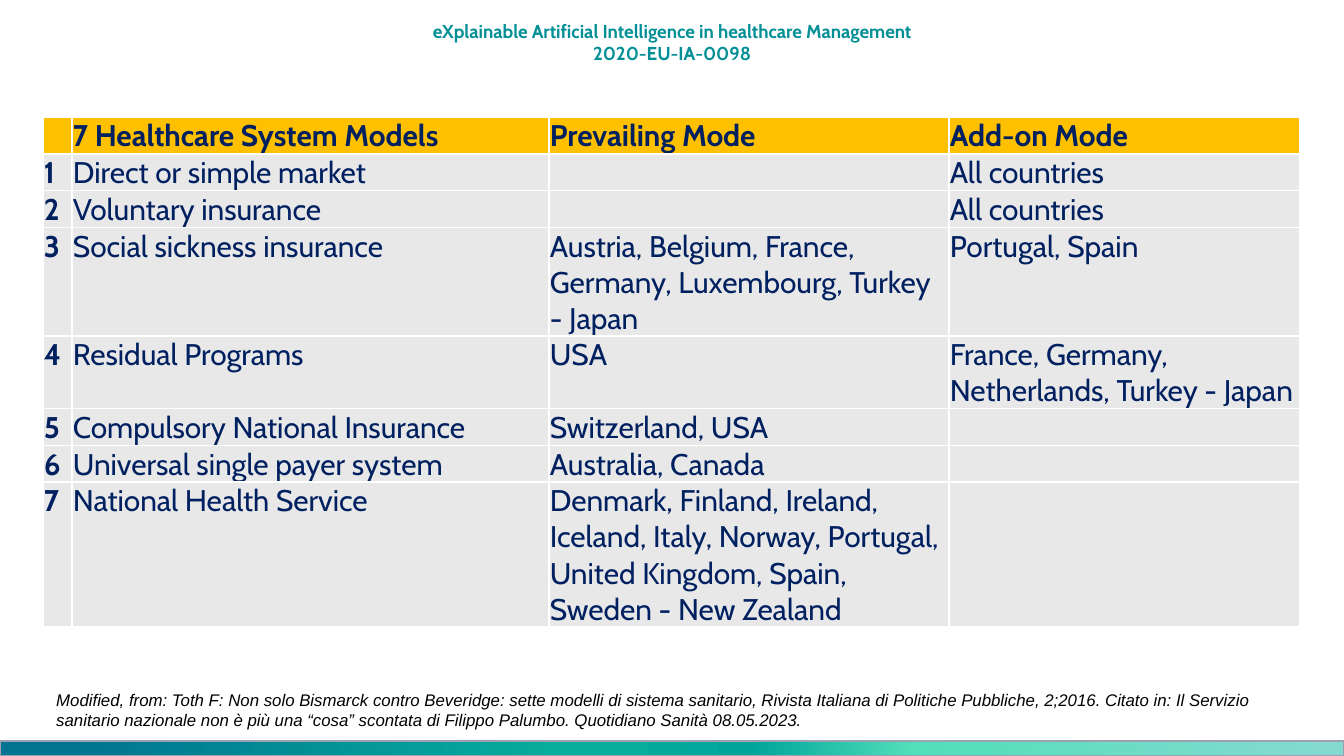
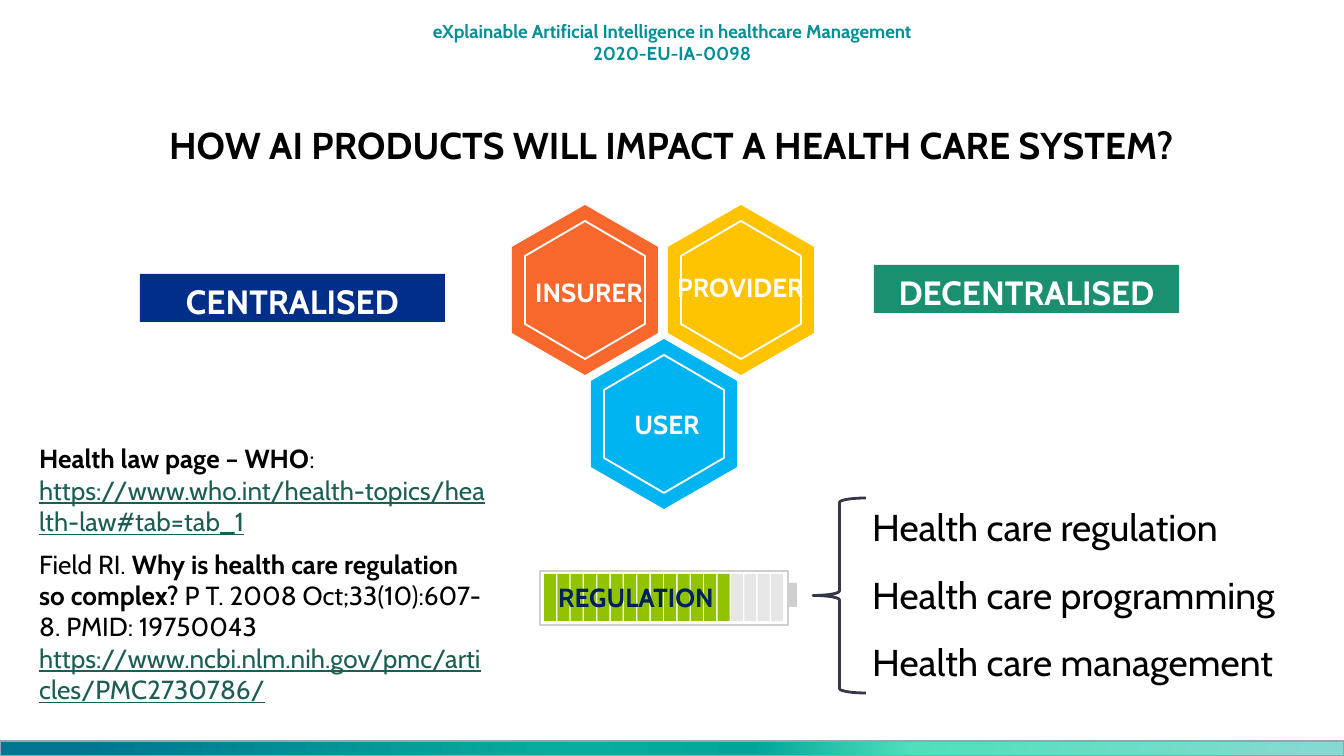
"""Builds two slides on healthcare system models and the impact of AI products."""
from lxml import etree
from pptx import Presentation
from pptx.dml.color import RGBColor
from pptx.enum.shapes import MSO_SHAPE
from pptx.enum.text import MSO_ANCHOR, PP_ALIGN
from pptx.oxml.ns import qn
from pptx.util import Pt

RECTANGLE, LEFT_BRACE = MSO_SHAPE.RECTANGLE, MSO_SHAPE.LEFT_BRACE
LEFT, CENTER = PP_ALIGN.LEFT, PP_ALIGN.CENTER
TOP = MSO_ANCHOR.TOP
EMU_PER_PX = 914400 / 134.4
SLIDE_WIDTH, SLIDE_HEIGHT = 1344, 756

BLACK, WHITE, NAVY, TEAL, LINK = "000000", "FFFFFF", "002060", "038F96", "1C5D54"
AMBER, CELL_GREY, CASE_GREY = "FFC000", "E8E8E9", "CFCFCF"
CHARGED, UNCHARGED, BRACE_COLOR, BAND_LINE = "91C300", "E6E6E6", "353744", "9DA0B2"
BAND_STOPS = [(5, "007490"), (43, "06AF9D"), (56, "00A59A"), (68, "51DFBA"), (99, "85DACF")]

PROJECT = "eXplainable Artificial Intelligence in healthcare Management 2020-EU-IA-0098"
CITATION = (
    "Modified, from: Toth F: Non solo Bismarck contro Beveridge: sette modelli di sistema "
    "sanitario, Rivista Italiana di Politiche Pubbliche, 2;2016. Citato in: Il Servizio sanitario "
    "nazionale non è più una “cosa” scontata di Filippo Palumbo. Quotidiano Sanità 08.05.2023."
)
COLUMN_WIDTHS = [29, 477, 400, 351]
LINE_HEIGHT = 36
MODELS = [
    (1, ("", "7 Healthcare System Models", "Prevailing Mode", "Add-on Mode")),
    (1, ("1", "Direct or simple market", "", "All countries")),
    (1, ("2", "Voluntary insurance", "", "All countries")),
    (3, ("3", "Social sickness insurance",
         "Austria, Belgium, France, Germany, Luxembourg, Turkey - Japan", "Portugal, Spain")),
    (2, ("4", "Residual Programs", "USA", "France, Germany, Netherlands, Turkey - Japan")),
    (1, ("5", "Compulsory National Insurance", "Switzerland, USA", "")),
    (1, ("6", "Universal single payer system", "Australia, Canada", "")),
    (4, ("7", "National Health Service",
         "Denmark, Finland, Ireland, Iceland, Italy, Norway, Portugal, United Kingdom, Spain, "
         "Sweden - New Zealand", "")),
]

QUESTION = "HOW AI PRODUCTS WILL IMPACT A HEALTH CARE SYSTEM?"
ACTORS = [
    ("INSURER", "F8682C", (585, 290), (517, 270, 144)),
    ("USER", "00B4F1", (664, 424), (595, 402, 144)),
    ("PROVIDER", "FFC300", (741, 290), (664, 265, 153)),
]
SYSTEMS = [("CENTRALISED", "002E89", 140, 274), ("DECENTRALISED", "1A9071", 874, 265)]
TOPICS = ["Health care regulation", "Health care programming", "Health care management"]
REFERENCES = [
    [("Health law page – WHO", "bold"), (": ", ""),
     ("https://www.who.int/health-topics/health-law#tab=tab_1", "link")],
    [("Field RI. ", ""), ("Why is health care regulation so complex? ", "bold"),
     ("P T. 2008 Oct;33(10):607-8. PMID: 19750043 ", ""),
     ("https://www.ncbi.nlm.nih.gov/pmc/articles/PMC2730786/", "link")],
]
CELL_COUNT, CHARGED_COUNT = 18, 14


def px(length):
    return round(length * EMU_PER_PX)


def rgb(color):
    return RGBColor.from_string(color)


def set_font(font, size, color, bold=False, italic=False, name="Cabin"):
    font.name, font.size = name, Pt(size)
    font.bold, font.italic = bold, italic
    font.color.rgb = rgb(color)


def paint(shape, fill=None, line=None, width=1):
    shape.shadow.inherit = False
    if fill:
        shape.fill.solid()
        shape.fill.fore_color.rgb = rgb(fill)
    else:
        shape.fill.background()
    if line:
        shape.line.color.rgb = rgb(line)
        shape.line.width = Pt(width)
    else:
        shape.line.fill.background()
    return shape


def add_box(slide, kind, bounds, fill=None, line=None, width=1):
    shape = slide.shapes.add_shape(kind, *map(px, bounds))
    return paint(shape, fill, line, width)


def write(shape, texts, size, color, align=LEFT, after=0, **style):
    frame = shape.text_frame
    frame.word_wrap = True
    frame.vertical_anchor = TOP
    for index, text in enumerate(texts):
        paragraph = frame.paragraphs[0] if index == 0 else frame.add_paragraph()
        paragraph.alignment = align
        paragraph.space_after = Pt(after)
        set_font(paragraph.font, size, color, **style)
        runs = [(text, "")] if isinstance(text, str) else text
        for words, role in runs:
            run = paragraph.add_run()
            run.text = words
            if role == "bold":
                run.font.bold = True
            elif role == "link":
                run.font.underline = True
                run.font.color.rgb = rgb(LINK)
    return frame


def add_text(slide, bounds, texts, size, color, **style):
    return write(slide.shapes.add_textbox(*map(px, bounds)), texts, size, color, **style)


def add_frame(presentation):
    slide = presentation.slides.add_slide(presentation.slide_layouts[6])
    add_text(slide, (416, 13, 512, 59), [PROJECT], 10, TEAL, align=CENTER, bold=True)
    band = add_box(slide, RECTANGLE, (0, 741, SLIDE_WIDTH, 15), line=BAND_LINE, width=0.75)
    band.fill.gradient()
    band.fill.gradient_angle = 0
    stops = band._element.spPr.find(qn("a:gradFill")).find(qn("a:gsLst"))
    for stop in list(stops):
        stops.remove(stop)
    for position, color in BAND_STOPS:
        stop = etree.SubElement(stops, qn("a:gs"), pos=str(position * 1000))
        etree.SubElement(stop, qn("a:srgbClr"), val=color)
    return slide


def border_cell(cell):
    properties = cell._tc.get_or_add_tcPr()
    for side in ("lnL", "lnR", "lnT", "lnB"):
        line = etree.SubElement(properties, qn(f"a:{side}"), w=str(Pt(1)))
        fill = etree.SubElement(line, qn("a:solidFill"))
        etree.SubElement(fill, qn("a:srgbClr"), val=WHITE)


def fill_cell(cell, text, fill, bold):
    border_cell(cell)
    cell.fill.solid()
    cell.fill.fore_color.rgb = rgb(fill)
    cell.margin_left = cell.margin_right = cell.margin_top = px(1)
    cell.margin_bottom = 0
    paragraph = cell.text_frame.paragraphs[0]
    set_font(paragraph.font, 16, NAVY, bold)
    if text:
        paragraph.add_run().text = text
    else:
        paragraph._p.get_or_add_endParaRPr().set("sz", "1600")


def add_models_slide(presentation):
    slide = add_frame(presentation)
    add_text(slide, (43, 683, 1257, 54), [CITATION], 9, BLACK, italic=True, name="Arial")
    height = LINE_HEIGHT * sum(lines for lines, _ in MODELS)
    bounds = (43, 117, sum(COLUMN_WIDTHS), height)
    table = slide.shapes.add_table(len(MODELS), len(COLUMN_WIDTHS), *map(px, bounds)).table
    for column, width in zip(table.columns, COLUMN_WIDTHS):
        column.width = px(width)
    for row, (lines, texts) in enumerate(MODELS):
        table.rows[row].height = px(LINE_HEIGHT * lines)
        for column, text in enumerate(texts):
            fill = CELL_GREY if row else AMBER
            fill_cell(table.cell(row, column), text, fill, row == 0 or column == 0)


def add_hexagon(slide, center, half_width, half_height, half_side, **colors):
    x, y = center
    points = [
        (x - half_width, y - half_side), (x - half_width, y + half_side), (x, y + half_height),
        (x + half_width, y + half_side), (x + half_width, y - half_side), (x, y - half_height),
    ]
    builder = slide.shapes.build_freeform(*points[0], scale=EMU_PER_PX)
    builder.add_line_segments(points[1:], close=True)
    paint(builder.convert_to_shape(), **colors)


def add_battery(slide):
    add_box(slide, RECTANGLE, (540, 571, 248, 54), line=CASE_GREY)
    add_box(slide, RECTANGLE, (788, 583, 9, 24), CASE_GREY)
    for index in range(CELL_COUNT):
        left = 544 + index * 227 / (CELL_COUNT - 1)
        color = CHARGED if index < CHARGED_COUNT else UNCHARGED
        add_box(slide, RECTANGLE, (left, 574, 12, 47), color)
    add_text(slide, (537, 575, 198, 46), ["REGULATION"], 14, NAVY, align=CENTER, bold=True)


def add_impact_slide(presentation):
    slide = add_frame(presentation)
    add_text(slide, (48, 116, 1247, 59), [QUESTION], 20, BLACK, align=CENTER, bold=True)
    for _, color, center, _ in ACTORS:
        add_hexagon(slide, center, 73, 85, 43, fill=color)
        add_hexagon(slide, center, 60, 69, 34, line=WHITE)
    for name, _, _, (left, top, width) in ACTORS:
        frame = add_text(slide, (left, top, width, 46), [name], 14, WHITE,
                         align=CENTER, bold=True)
        frame.margin_left = frame.margin_right = 0
    add_battery(slide)
    for name, color, left, top in SYSTEMS:
        box = add_box(slide, RECTANGLE, (left, top, 305, 48), color)
        write(box, [name], 18, WHITE, align=CENTER, bold=True)
    add_text(slide, (859, 498, 460, 195), TOPICS, 20, BLACK, after=12)
    add_box(slide, LEFT_BRACE, (813, 498, 53, 195), line=BRACE_COLOR, width=1.5)
    add_text(slide, (26, 436, 474, 278), REFERENCES, 14, BLACK, after=6)


def main():
    presentation = Presentation()
    presentation.slide_width, presentation.slide_height = px(SLIDE_WIDTH), px(SLIDE_HEIGHT)
    add_models_slide(presentation)
    add_impact_slide(presentation)
    presentation.save("out.pptx")


if __name__ == "__main__":
    main()
